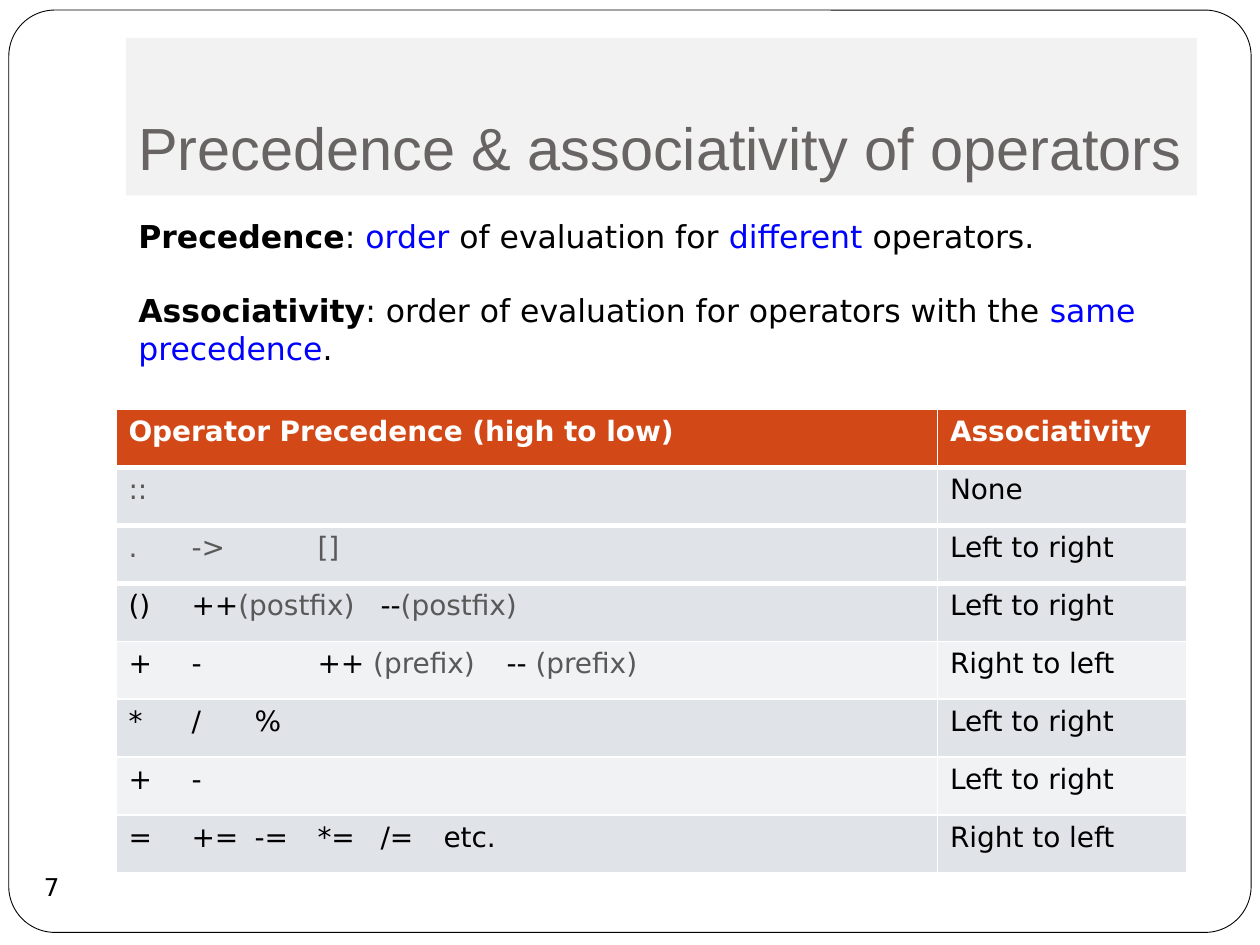
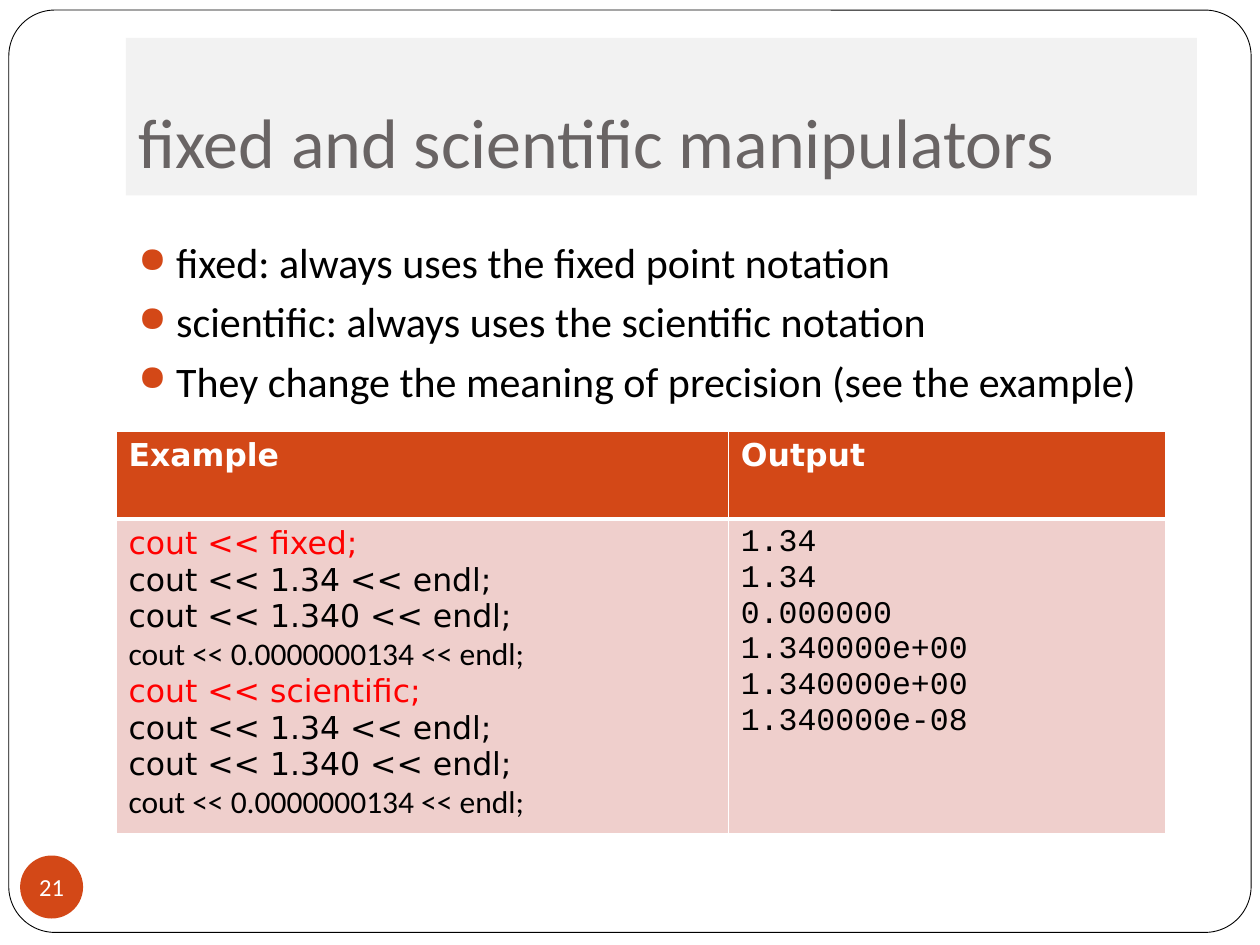
from lxml import etree
from pptx import Presentation
from pptx.dml.color import RGBColor as RGB
from pptx.enum.shapes import MSO_SHAPE as Kind
from pptx.enum.text import MSO_ANCHOR as Anchor, PP_ALIGN as Align
from pptx.oxml.ns import qn
from pptx.util import Inches, Pt

INK = {
    "black": "000000", "white": "FFFFFF", "band": "F2F2F2", "title": "696464",
    "rust": "D34817", "blue": "0000FF", "red": "FF0000", "gray": "595959",
    "dark": "E0E4E9", "light": "F0F2F4", "pink": "EFCFCC",
}
SANS, BODY, MONO = "DejaVu Sans", "Calibri", "Courier New"
BLUE, GRAY, RED = {"ink": "blue"}, {"ink": "gray"}, {"ink": "red"}
BOLD, SLIM = {"bold": True}, {"font": BODY}


def write(frame, paras, align=Align.LEFT, before=0, after=0, bullet=None, **base):
    """Fill a frame; a paragraph is a string or a list of strings and (string, format) runs."""
    frame.word_wrap = True
    for i, runs in enumerate(paras):
        para = frame.paragraphs[0] if i == 0 else frame.add_paragraph()
        para.alignment = align
        para.space_before = Pt(before)
        para.space_after = Pt(after if i < len(paras) - 1 else 0)
        if bullet:
            props = para._p.get_or_add_pPr()
            props.set("marL", str(Inches(0.3)))
            props.set("indent", str(-Inches(0.3)))
            tint = etree.SubElement(props, qn("a:buClr"))
            etree.SubElement(tint, qn("a:srgbClr"), val=INK["rust"])
            etree.SubElement(props, qn("a:buSzPct"), val="85000")
            etree.SubElement(props, qn("a:buChar"), char=bullet)
        for part in [runs] if isinstance(runs, str) else runs:
            text, extra = (part, {}) if isinstance(part, str) else part
            fmt = {"ink": "black", "bold": False, **base, **extra}
            run = para.add_run()
            run.text = text
            run.font.size = Pt(fmt["size"])
            run.font.name = fmt["font"]
            run.font.bold = fmt["bold"]
            run.font.color.rgb = RGB.from_string(INK[fmt["ink"]])


def grid(slide, top, cols, highs, rows, fills, thick, size):
    """Add a table; the rows up to number thick end in a heavy white rule."""
    tab = slide.shapes.add_table(len(rows), len(cols), Inches(0.92), Inches(top),
                                 Inches(sum(cols)), Inches(sum(highs))).table
    tab.horz_banding = False
    for col, wide in zip(tab.columns, cols):
        col.width = Inches(wide)
    for r, (row, high, fill) in enumerate(zip(rows, highs, fills)):
        tab.rows[r].height = Inches(high)
        for c, paras in enumerate(row):
            cell = tab.cell(r, c)
            props = cell._tc.get_or_add_tcPr()
            heavy = {"T": 0 < r <= thick + 1, "B": r <= thick}
            for side in "LRTB":
                line = etree.SubElement(props, qn("a:ln" + side),
                                        w=str(Pt(3 if heavy.get(side) else 1)))
                paint = etree.SubElement(line, qn("a:solidFill"))
                etree.SubElement(paint, qn("a:srgbClr"), val=INK["white"])
            cell.fill.solid()
            cell.fill.fore_color.rgb = RGB.from_string(INK[fill])
            head = {"ink": "white", "bold": True} if r == 0 else {}
            font = MONO if r and c and thick == 0 else SANS
            write(cell.text_frame, paras, size=size, font=font, **head)


deck = Presentation()
deck.slide_width, deck.slide_height = Inches(10), Inches(7.5)

# Frame, title band and page number on each slide
heads = [
    ("Precedence & associativity of operators", "Arial", 34, "7", SANS, "black", None),
    ("fixed and scientific manipulators", BODY, 40, "21", BODY, "white", "rust"),
]
slides = []
for title, face, size, num, font, ink, disc in heads:
    slide = deck.slides.add_slide(deck.slide_layouts[6])
    slides.append(slide)
    parts = [
        (Kind.ROUNDED_RECTANGLE, (0.07, 0.08, 9.86, 7.32), "white"),
        (Kind.RECTANGLE, (1, 0.3, 8.5, 1.25), "band"),
        (Kind.OVAL, (0.16, 6.79, 0.5, 0.5), disc),
    ]
    made = []
    for kind, box, fill in parts:
        shape = slide.shapes.add_shape(kind, *map(Inches, box))
        shape.shadow.inherit = False
        shape.line.fill.background()
        if fill:
            shape.fill.solid()
            shape.fill.fore_color.rgb = RGB.from_string(INK[fill])
        else:
            shape.fill.background()
        made.append(shape)
    edge, band, dot = made
    edge.adjustments[0] = 0.05
    edge.line.color.rgb = RGB.from_string(INK["black"])
    edge.line.width = Pt(0.5)

    frame = band.text_frame
    frame.vertical_anchor = Anchor.BOTTOM
    frame.margin_bottom = Inches(0.1)
    write(frame, [title], size=size, font=face, ink="title")

    frame = dot.text_frame
    frame.vertical_anchor = Anchor.MIDDLE
    frame.margin_left = frame.margin_right = frame.margin_top = frame.margin_bottom = 0
    write(frame, [num], align=Align.CENTER, size=14, font=font, ink=ink)
    frame.word_wrap = False

# Operators
rules, manip = slides
terms = [
    [("Precedence", BOLD), ": ", ("order ", BLUE), "of evaluation for ",
     ("different ", BLUE), "operators."],
    [("Associativity", BOLD), ": order of evaluation for operators with the ",
     ("same precedence", BLUE), "."],
]
note = rules.shapes.add_textbox(Inches(1), Inches(1.67), Inches(8.23), Inches(1.31))
write(note.text_frame, terms, after=21, size=18, font=SANS)

ops = [
    (["Operator Precedence (high to low)"], "Associativity"),
    ([[("::", GRAY)]], "None"),
    ([[(".\t->\t\t[]", GRAY)]], "Left to right"),
    ([["()\t++", ("(postfix)", GRAY), "\t--", ("(postfix)", GRAY)]], "Left to right"),
    ([["+\t-\t\t++ ", ("(prefix)", GRAY), "\t-- ", ("(prefix)", GRAY)]], "Right to left"),
    (["*\t/\t%"], "Left to right"),
    (["+\t-"], "Left to right"),
    (["=\t+=\t-=\t*=\t/=\tetc."], "Right to left"),
]
fills = ["rust", "dark", "dark", "dark", "light", "dark", "light", "dark"]
grid(rules, 3.25, [6.52, 1.98], [0.46] * len(ops),
     [(left, [right]) for left, right in ops], fills, thick=2, size=16)

# Manipulators
points = [
    "fixed: always uses the fixed point notation",
    "scientific: always uses the scientific notation",
    "They change the meaning of precision (see the example)",
]
note = manip.shapes.add_textbox(Inches(1), Inches(1.83), Inches(8.5), Inches(1.42))
write(note.text_frame, points, before=5, bullet="●", size=24, font=BODY)

code = []
for mode in ("fixed", "scientific"):
    code += [
        [(f"cout << {mode};", RED)],
        "cout << 1.34 << endl;",
        "cout << 1.340 << endl;",
        [("cout << 0.0000000134 << endl;", SLIM)],
    ]
shown = ["1.34", "1.34", "0.000000", "1.340000e+00", "1.340000e+00", "1.340000e-08"]
grid(manip, 3.42, [4.86, 3.47], [0.7, 2.45],
     [(["Example"], ["Output"]), (code, shown)], ["rust", "pink"], thick=0, size=18)

deck.save("out.pptx")
